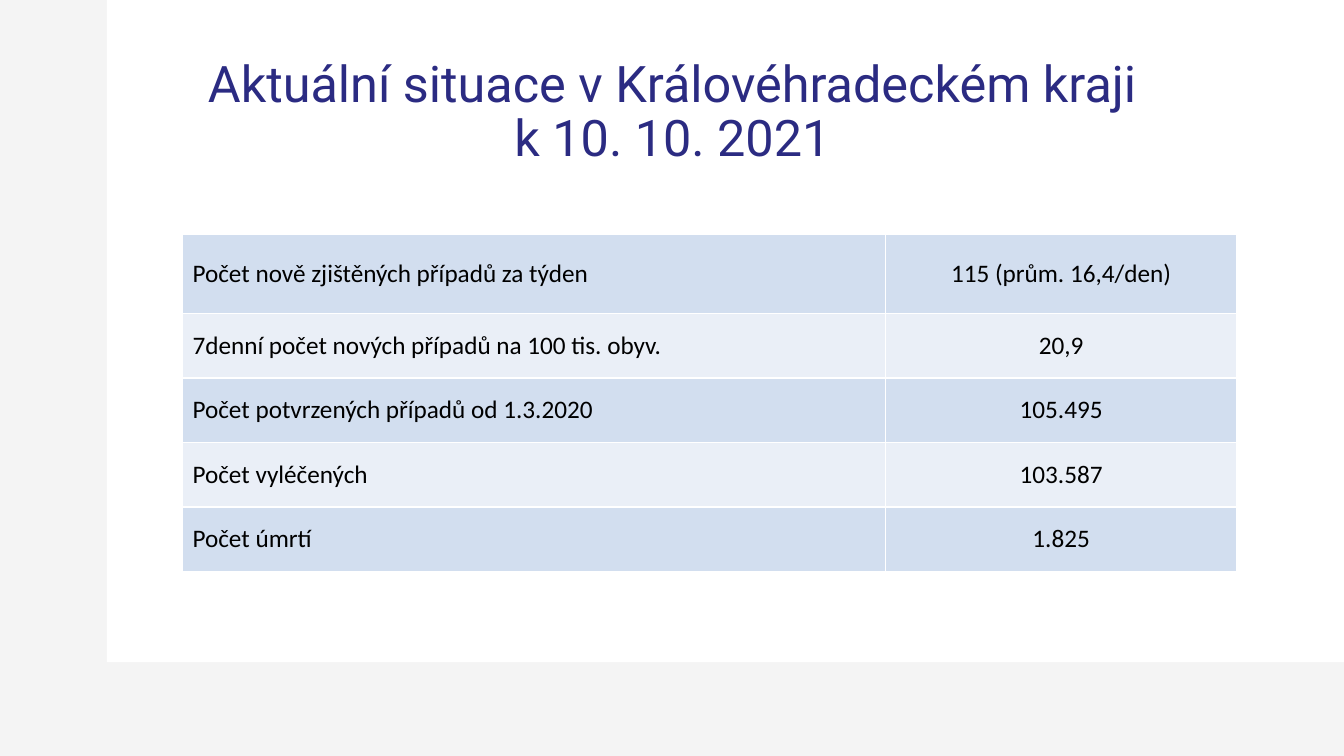
"""Build the slide on the current situation in the region."""
from lxml import etree
from pptx import Presentation
from pptx.dml.color import RGBColor
from pptx.enum.shapes import MSO_SHAPE
from pptx.enum.text import MSO_ANCHOR, PP_ALIGN
from pptx.oxml.ns import qn
from pptx.util import Inches, Pt

RECT = MSO_SHAPE.RECTANGLE
MIDDLE = MSO_ANCHOR.MIDDLE
LEFT, CENTER = PP_ALIGN.LEFT, PP_ALIGN.CENTER

TITLE = ["Aktuální situace v Královéhradeckém kraji", "k 10. 10. 2021"]
ROWS = [
    ("Počet nově zjištěných případů za týden", "115 (prům. 16,4/den)"),
    ("7denní počet nových případů na 100 tis. obyv.", "20,9"),
    ("Počet potvrzených případů od 1.3.2020", "105.495"),
    ("Počet vyléčených", "103.587"),
    ("Počet úmrtí", "1.825"),
]
WIDTHS = [6.97, 3.49]
FIRST, OTHER = 0.78, 0.64
BANDS = ["D2DEEF", "EAEFF7"]
WHITE, GREY, NAVY, BLACK = "FFFFFF", "F4F4F4", "2B2B82", "000000"


def paint(fill, color):
    fill.solid()
    fill.fore_color.rgb = RGBColor.from_string(color)


def write(para, text, font, size, color):
    run = para.add_run()
    run.text = text
    run.font.name = font
    run.font.size = Pt(size)
    run.font.color.rgb = RGBColor.from_string(color)


def edge(cell):
    props = cell._tc.get_or_add_tcPr()
    for place, side in enumerate(("a:lnL", "a:lnR", "a:lnT", "a:lnB")):
        line = etree.Element(qn(side), w=str(Pt(1)))
        fill = etree.SubElement(line, qn("a:solidFill"))
        etree.SubElement(fill, qn("a:srgbClr"), val=WHITE)
        props.insert(place, line)


def add_panel(slide):
    panel = slide.shapes.add_shape(
        RECT, Inches(1.06), 0, Inches(12.27), Inches(6.57))
    panel.shadow.inherit = False
    paint(panel.fill, WHITE)
    panel.line.fill.background()


def add_title(slide):
    box = slide.shapes.add_textbox(
        Inches(0.92), Inches(0.4), Inches(11.5), Inches(1.45))
    frame = box.text_frame
    frame.word_wrap = True
    frame.vertical_anchor = MIDDLE
    para = frame.paragraphs[0]
    para.alignment = CENTER
    para.line_spacing = 0.9
    for num, text in enumerate(TITLE):
        if num:
            para.add_line_break()
        write(para, text, "Roboto", 36, NAVY)


def add_grid(slide):
    highs = [FIRST] + [OTHER] * (len(ROWS) - 1)
    table = slide.shapes.add_table(
        len(ROWS), len(WIDTHS), Inches(1.81), Inches(2.33),
        Inches(sum(WIDTHS)), Inches(sum(highs))).table
    table.first_row = False
    for col, width in zip(table.columns, WIDTHS):
        col.width = Inches(width)
    for num, texts in enumerate(ROWS):
        table.rows[num].height = Inches(highs[num])
        for col, text in enumerate(texts):
            cell = table.cell(num, col)
            cell.vertical_anchor = MIDDLE
            paint(cell.fill, BANDS[num % 2])
            edge(cell)
            para = cell.text_frame.paragraphs[0]
            para.alignment = CENTER if col else LEFT
            write(para, text, "Calibri", 18, BLACK)


def main():
    deck = Presentation()
    deck.slide_width, deck.slide_height = Inches(13.33), Inches(7.5)
    slide = deck.slides.add_slide(deck.slide_layouts[6])
    paint(slide.background.fill, GREY)
    add_panel(slide)
    add_title(slide)
    add_grid(slide)
    deck.save("out.pptx")


if __name__ == "__main__":
    main()
